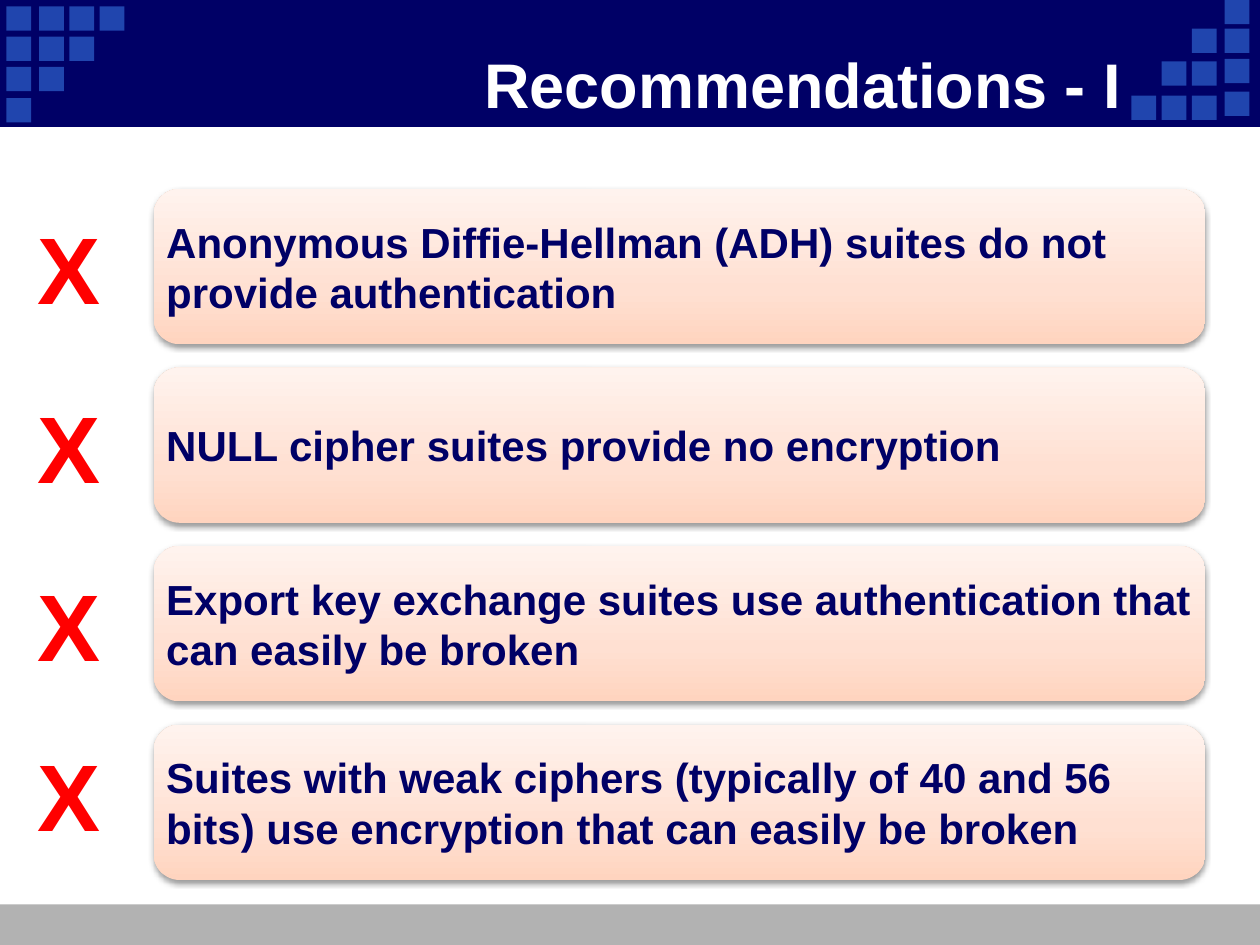
"""Build the "Recommendations - I" slide with four cipher suite warnings."""
from pptx import Presentation
from pptx.dml.color import RGBColor
from pptx.enum.shapes import MSO_SHAPE
from pptx.enum.text import MSO_ANCHOR, MSO_AUTO_SIZE, PP_ALIGN
from pptx.oxml import parse_xml
from pptx.util import Cm, Pt

RECT, ROUNDED = MSO_SHAPE.RECTANGLE, MSO_SHAPE.ROUNDED_RECTANGLE
MIDDLE, TOP = MSO_ANCHOR.MIDDLE, MSO_ANCHOR.TOP
LEFT, RIGHT = PP_ALIGN.LEFT, PP_ALIGN.RIGHT
GROW, FIXED = MSO_AUTO_SIZE.SHAPE_TO_FIT_TEXT, MSO_AUTO_SIZE.NONE
NAVY = RGBColor(0x00, 0x00, 0x66)
BLUE = RGBColor(0x20, 0x45, 0xAE)
GRAY = RGBColor(0xB2, 0xB2, 0xB2)
RED = RGBColor(0xFF, 0x00, 0x00)
WHITE = RGBColor(0xFF, 0xFF, 0xFF)
PEACH = RGBColor(0xFF, 0xD4, 0xBF)
LIGHT_PEACH = RGBColor(0xFF, 0xE0, 0xD2)
PALE_PEACH = RGBColor(0xFF, 0xF3, 0xEE)
NS = 'xmlns:a="http://schemas.openxmlformats.org/drawingml/2006/main"'
STOPS = "".join(
    f'<a:gs pos="{pos}"><a:srgbClr val="{color}"/></a:gs>'
    for pos, color in ((0, PEACH), (35000, LIGHT_PEACH), (100000, PALE_PEACH))
)
GRADIENT = f'<a:gradFill {NS} rotWithShape="1"><a:gsLst>{STOPS}</a:gsLst><a:lin ang="16200000" scaled="0"/></a:gradFill>'
SHADOW = (
    f'<a:effectLst {NS}><a:outerShdw blurRad="40000" dist="20000" dir="5400000" rotWithShape="0">'
    '<a:srgbClr val="000000"><a:alpha val="38000"/></a:srgbClr></a:outerShdw></a:effectLst>'
)

CARDS = [
    "Anonymous Difﬁe-Hellman (ADH) suites do not provide authentication",
    "NULL cipher suites provide no encryption",
    "Export key exchange suites use authentication that can easily be broken",
    "Suites with weak ciphers (typically of 40 and 56 bits) use encryption that can easily be broken",
]
MARK_OFFSETS = [0.3, 0.3, 0.3, 0.12]
LEFT_ROWS = [0.13, 0.74, 1.35, 1.98]
RIGHT_ROWS = [1.93, 1.24, 0.58]
SQUARE_COLUMNS = [(x, LEFT_ROWS[:4 - i]) for i, x in enumerate([0.13, 0.79, 1.4, 2.01])]
SQUARE_COLUMNS += [(x, RIGHT_ROWS[:3 - i]) for i, x in enumerate([24.03, 23.42, 22.81])]
SQUARE_COLUMNS.append((24.69, [1.85, 1.19, 0.58, 0]))


def add_block(s, x, y, w, h, color):
    sp = s.shapes.add_shape(RECT, Cm(x), Cm(y), Cm(w), Cm(h))
    sp.shadow.inherit = False
    sp.fill.solid()
    sp.fill.fore_color.rgb = color
    sp.line.fill.background()
    return sp


def write(sp, text, size, color, align, anchor, fit):
    tf = sp.text_frame
    tf.word_wrap = True
    tf.auto_size = fit
    tf.vertical_anchor = anchor
    p = tf.paragraphs[0]
    p.alignment = align
    r = p.add_run()
    r.text = text
    r.font.name = "Arial"
    r.font.size = Pt(size)
    r.font.bold = True
    r.font.color.rgb = color


prs = Presentation()
prs.slide_width, prs.slide_height = Cm(25.4), Cm(19.05)
s = prs.slides.add_slide(prs.slide_layouts[5])

add_block(s, 0, 18.23, 25.4, 0.82, GRAY)
header = add_block(s, 0, 0, 25.4, 2.54, NAVY)
header.line.color.rgb = NAVY
header.line.width = Pt(0.75)
for x, rows in SQUARE_COLUMNS:
    for y in rows:
        add_block(s, x, y, 0.5, 0.49, BLUE)

title = s.shapes.title
title.left, title.top, title.width, title.height = Cm(2.34), Cm(0.89), Cm(20.52), Cm(1.57)
write(title, "Recommendations - I", 36, WHITE, RIGHT, MIDDLE, FIXED)
title.element.getparent().append(title.element)

for i, (text, offset) in enumerate(zip(CARDS, MARK_OFFSETS)):
    y = 3.81 + 3.6 * i
    card = s.shapes.add_shape(ROUNDED, Cm(3.1), Cm(y), Cm(21.2), Cm(3.13))
    card.line.fill.background()
    card.element.spPr.prstGeom.addnext(parse_xml(GRADIENT))
    card.element.spPr.append(parse_xml(SHADOW))
    card.text_frame.margin_left = card.text_frame.margin_right = Cm(0.1)
    write(card, text, 24, NAVY, LEFT, MIDDLE, FIXED)
    mark = s.shapes.add_textbox(Cm(0.5), Cm(y + offset), Cm(1.7), Cm(2.57))
    write(mark, "X", 54, RED, LEFT, TOP, GROW)

prs.save("out.pptx")
